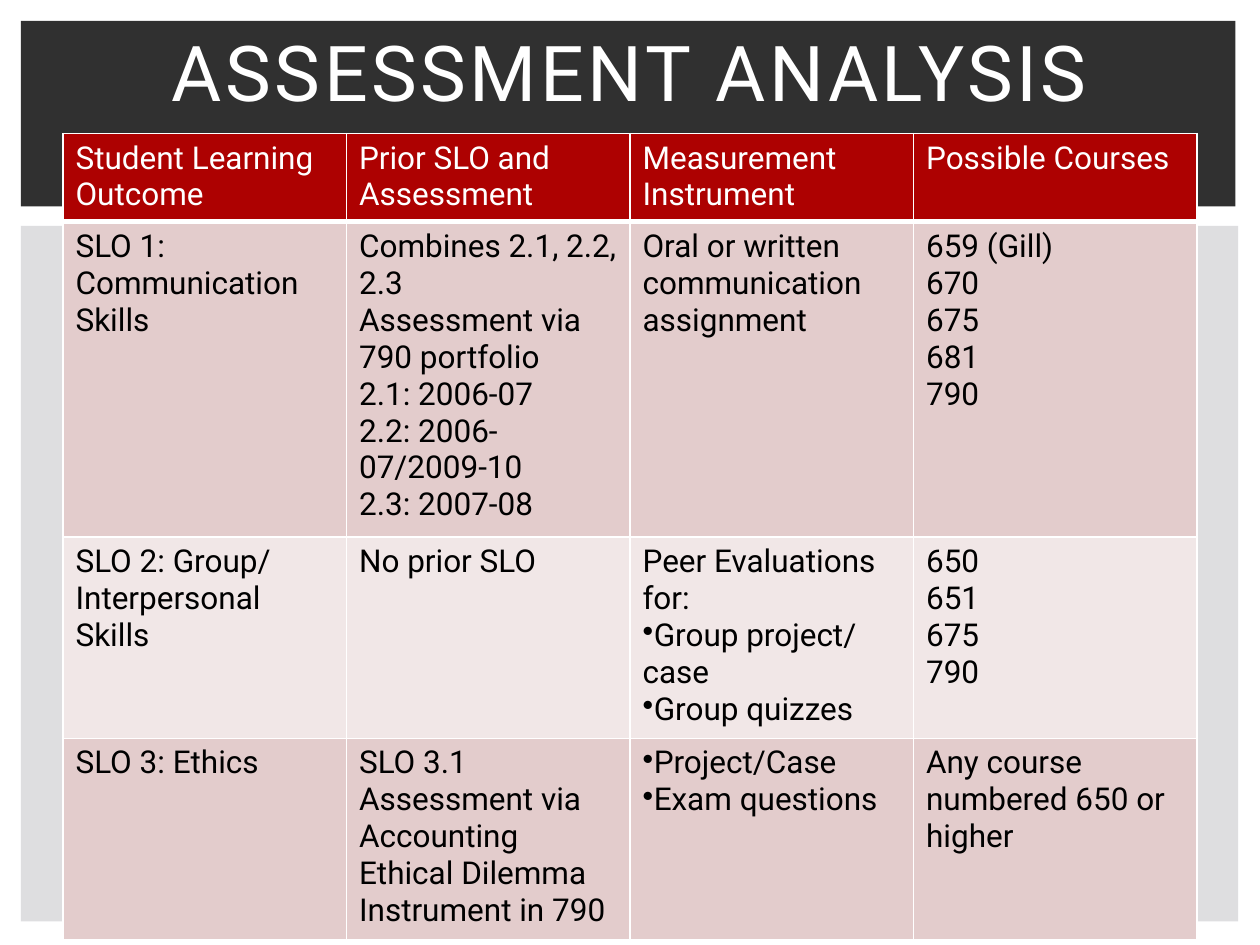
from pptx import Presentation
from pptx.dml.color import RGBColor
from pptx.enum.shapes import MSO_SHAPE
from pptx.enum.text import MSO_ANCHOR, PP_ALIGN
from pptx.oxml.ns import qn
from pptx.util import Pt
from lxml.etree import SubElement

COLORS = {"white": "FFFFFF", "black": "000000", "panel": "DEDEE0", "banner": "303030",
          "header": "AD0101", "odd": "E3CCCC", "even": "F1E7E7"}
TITLE = {"name": "Roboto", "size": Pt(44)}
BODY = {"name": "Roboto", "size": Pt(18)}
BULLET = "•"

HEIGHTS = [49, 176, 112.5, 112.5]
ROWS = [
    ["Student Learning Outcome", "Prior SLO and Assessment", "Measurement Instrument",
     "Possible Courses"],
    ["SLO 1: Communication Skills",
     "Combines 2.1, 2.2, 2.3\nAssessment via 790 portfolio\n2.1: 2006-07\n"
     "2.2: 2006-07/2009-10\n2.3: 2007-08",
     "Oral or written communication assignment",
     "659 (Gill)\n670\n675\n681\n790"],
    ["SLO 2: Group/ Interpersonal Skills", "No prior SLO",
     "Peer Evaluations for:\n•Group project/ case\n•Group quizzes",
     "650\n651\n675\n790"],
    ["SLO 3: Ethics",
     "SLO 3.1\nAssessment via Accounting Ethical Dilemma Instrument in 790",
     "•Project/Case\n•Exam questions",
     "Any course numbered 650 or higher"],
]


class SlideBuilder:
    """Hold the style and the current slide, and draw its elements."""

    def __init__(self, prs):
        self.s = prs.slides.add_slide(prs.slide_layouts[6])

    def color(self, name):
        return RGBColor.from_string(COLORS[name])

    def run(self, p, text, style, color):
        r = p.add_run()
        r.text = text
        for key, value in style.items():
            setattr(r.font, key, value)
        r.font.color.rgb = self.color(color)
        return r

    def rect(self, x, y, w, h, fill):
        sp = self.s.shapes.add_shape(MSO_SHAPE.RECTANGLE, Pt(x), Pt(y), Pt(w), Pt(h))
        sp.shadow.inherit = False
        sp.fill.solid()
        sp.fill.fore_color.rgb = self.color(fill)
        sp.line.fill.background()

    def title(self, x, y, w, h, text):
        tf = self.s.shapes.add_textbox(Pt(x), Pt(y), Pt(w), Pt(h)).text_frame
        for key, value in {"word_wrap": True, "vertical_anchor": MSO_ANCHOR.MIDDLE}.items():
            setattr(tf, key, value)
        p = tf.paragraphs[0]
        p.alignment = PP_ALIGN.CENTER
        r = self.run(p, text, TITLE, "white")
        r.font._element.set("spc", "200")

    def border(self, cell, side, width):
        ln = SubElement(cell._tc.get_or_add_tcPr(), qn(f"a:ln{side}"), w=str(Pt(width)))
        fill = SubElement(ln, qn("a:solidFill"))
        SubElement(fill, qn("a:srgbClr"), val=COLORS["white"])

    def cell(self, cell, text, fill, color, edges):
        for side, width in edges.items():
            self.border(cell, side, width)
        cell.fill.solid()
        cell.fill.fore_color.rgb = self.color(fill)
        tf = cell.text_frame
        for i, line in enumerate(text.split("\n")):
            p = tf.add_paragraph() if i else tf.paragraphs[0]
            if line.startswith(BULLET):
                SubElement(p._p.get_or_add_pPr(), qn("a:buChar"), char=BULLET)
            self.run(p, line.removeprefix(BULLET), BODY, color)

    def table(self, x, y, w, rows, heights):
        cols = len(rows[0])
        frame = self.s.shapes.add_table(len(rows), cols, Pt(x), Pt(y), Pt(w), Pt(sum(heights)))
        table = frame.table
        for col in table.columns:
            col.width = Pt(w / cols)
        for i, (texts, height) in enumerate(zip(rows, heights)):
            table.rows[i].height = Pt(height)
            fill = "header" if i == 0 else "odd" if i % 2 else "even"
            color = "black" if i else "white"
            edges = {"L": 1, "R": 1, "T": 3 if i == 1 else 1, "B": 1 if i else 3}
            for j, text in enumerate(texts):
                self.cell(table.cell(i, j), text, fill, color, edges)


def main():
    prs = Presentation()
    prs.slide_width, prs.slide_height = Pt(720), Pt(540)
    b = SlideBuilder(prs)
    b.rect(12, 129, 695.5, 397.5, "panel")
    b.rect(12, 12, 694, 106, "banner")
    b.title(36, 24, 648, 32.5, "ASSESSMENT ANALYSIS")
    b.table(36, 76.3, 648, ROWS, HEIGHTS)
    prs.save("out.pptx")


if __name__ == "__main__":
    main()
